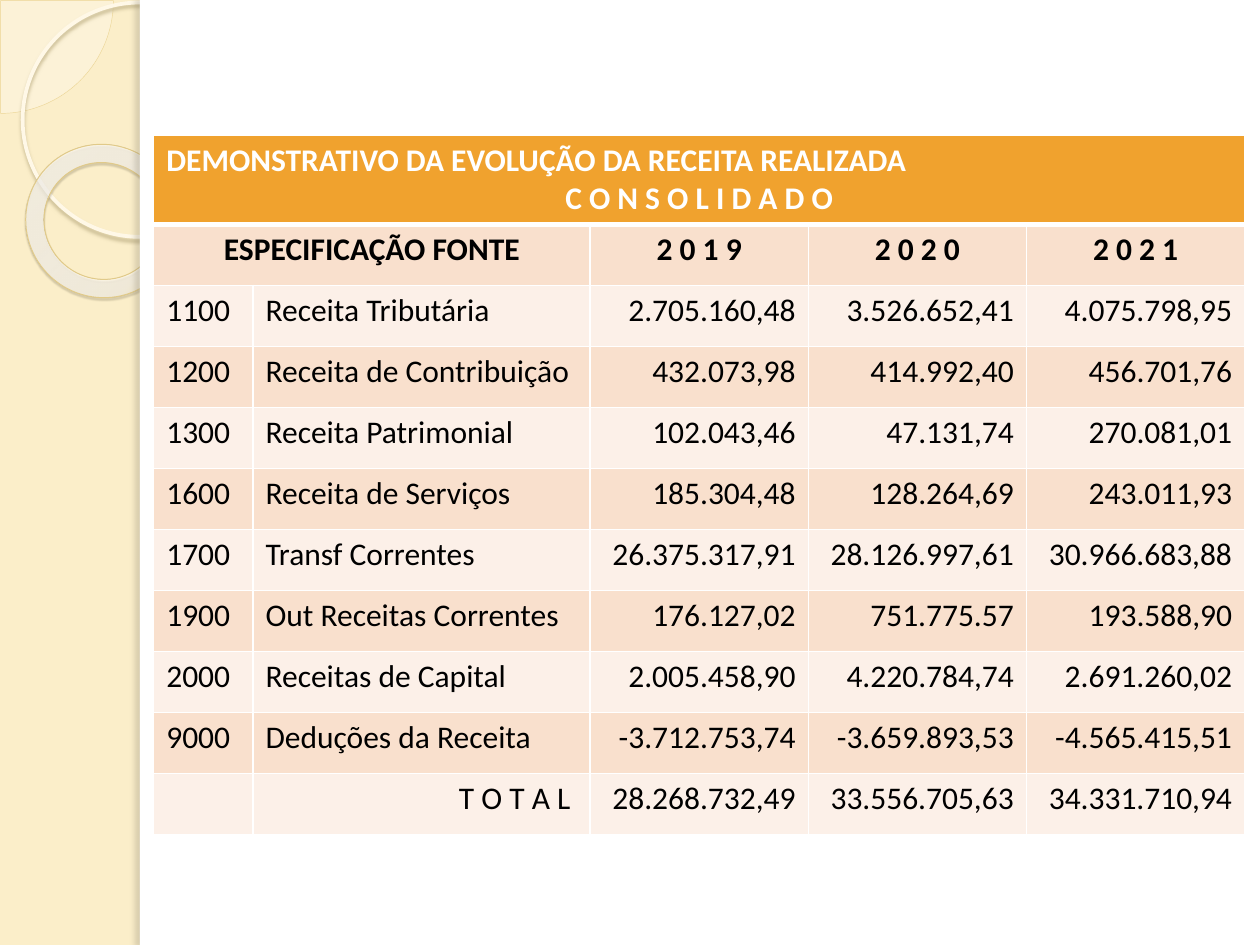
from dataclasses import dataclass

from pptx import Presentation
from pptx.dml.color import RGBColor
from pptx.enum.shapes import MSO_SHAPE
from pptx.enum.text import PP_ALIGN
from pptx.oxml import parse_xml
from pptx.oxml.ns import nsdecls, qn
from pptx.util import Inches, Pt

SLIDE_WIDTH, SLIDE_HEIGHT = Inches(10), Inches(7.5)


@dataclass(frozen=True)
class Theme:
    cream: str = "FBEEC9"
    white: str = "FFFFFF"
    black: str = "000000"
    heading: str = "F0A22E"
    bands: tuple = ("FCF0E8", "F9E0CD")
    corner: str = "FFFCF6"
    corner_edge: str = "ECD697"
    circle_edge: str = "FFF8E7"
    circle_shadow: str = "C3B58B"
    ring_edge: str = "E1CA89"
    ring_shadow: str = "655C41"
    ring_stops: tuple = ((0, "FFFDF8", 70), (70, "FFFEFC", 55), (100, "FFE290", 60))
    panel_shadow: str = "7E7763"
    font: str = "Calibri"
    size: int = 18
    rule: int = 1
    heading_rule: int = 3


THEME = Theme()

COLUMN_SHARES = (9.1, 30.9, 20, 20, 20)
HEADING = "DEMONSTRATIVO DA EVOLUÇÃO DA RECEITA REALIZADA\nC O N S O L I D A D O"
REVENUE = (
    (HEADING, "", "", "", ""),
    ("ESPECIFICAÇÃO FONTE", "", "2 0 1 9", "2 0 2 0", "2 0 2 1"),
    ("1100", "Receita Tributária", "2.705.160,48", "3.526.652,41", "4.075.798,95"),
    ("1200", "Receita de Contribuição", "432.073,98", "414.992,40", "456.701,76"),
    ("1300", "Receita Patrimonial", "102.043,46", "47.131,74", "270.081,01"),
    ("1600", "Receita de Serviços", "185.304,48", "128.264,69", "243.011,93"),
    ("1700", "Transf Correntes", "26.375.317,91", "28.126.997,61", "30.966.683,88"),
    ("1900", "Out Receitas Correntes", "176.127,02", "751.775.57", "193.588,90"),
    ("2000", "Receitas de Capital", "2.005.458,90", "4.220.784,74", "2.691.260,02"),
    ("9000", "Deduções da Receita", "-3.712.753,74", "-3.659.893,53", "-4.565.415,51"),
    ("", "T O T A L ", "28.268.732,49", "33.556.705,63", "34.331.710,94"),
)


def box(left, top, width, height):
    return (
        int(SLIDE_WIDTH * left / 100),
        int(SLIDE_HEIGHT * top / 100),
        int(SLIDE_WIDTH * width / 100),
        int(SLIDE_HEIGHT * height / 100),
    )


def add_ornament(slide, preset, place, fill=None, edge=None, edge_width=0):
    ornament = slide.shapes.add_shape(preset, *box(*place))
    ornament.shadow.inherit = False
    if fill:
        ornament.fill.solid()
        ornament.fill.fore_color.rgb = RGBColor.from_string(fill)
    else:
        ornament.fill.background()
    if edge:
        ornament.line.color.rgb = RGBColor.from_string(edge)
        ornament.line.width = Pt(edge_width)
    else:
        ornament.line.fill.background()
    return ornament


def color_xml(color, opacity):
    return f'<a:srgbClr val="{color}"><a:alpha val="{opacity * 1000}"/></a:srgbClr>'


def set_opacity(ornament, color, opacity):
    solid = ornament.element.spPr.find(qn("a:solidFill"))
    fill = parse_xml(f'<a:solidFill {nsdecls("a")}>{color_xml(color, opacity)}</a:solidFill>')
    ornament.element.spPr.replace(solid, fill)


def set_radial_fill(ornament, stops):
    stop_xml = "".join(
        f'<a:gs pos="{position * 1000}">{color_xml(color, opacity)}</a:gs>'
        for position, color, opacity in stops
    )
    gradient = parse_xml(
        f'<a:gradFill {nsdecls("a")} rotWithShape="1"><a:gsLst>{stop_xml}</a:gsLst>'
        '<a:path path="circle"><a:fillToRect l="-408000" t="-50000" r="508000" b="150000"/>'
        "</a:path></a:gradFill>"
    )
    empty = ornament.element.spPr.find(qn("a:noFill"))
    ornament.element.spPr.replace(empty, gradient)


def cast_shadow(ornament, color, opacity, blur, distance, angle):
    effects = ornament.element.spPr.find(qn("a:effectLst"))
    effects.append(parse_xml(
        f'<a:outerShdw {nsdecls("a")} blurRad="{Pt(blur)}" dist="{Pt(distance)}" '
        f'dir="{angle * 60000}" algn="tl" rotWithShape="0">{color_xml(color, opacity)}</a:outerShdw>'
    ))


def add_side_decoration(slide):
    corner = add_ornament(slide, MSO_SHAPE.PIE, (-8.9, -11.87, 17.9, 23.87),
                          THEME.corner, THEME.corner_edge, 0.25)
    corner.adjustments[0] = 0
    corner.adjustments[1] = 54.02
    set_opacity(corner, THEME.corner, 33)

    circle = add_ornament(slide, MSO_SHAPE.OVAL, (1.8, 0.27, 18.6, 24.8),
                          edge=THEME.circle_edge, edge_width=2.15)
    cast_shadow(circle, THEME.circle_shadow, 85, 2, 2, 90)

    ring = add_ornament(slide, MSO_SHAPE.DONUT, (2, 15.33, 12.3, 16.13),
                        edge=THEME.ring_edge, edge_width=0.58)
    ring.adjustments[0] = 0.12
    ring.rotation = 38.6
    set_radial_fill(ring, THEME.ring_stops)
    cast_shadow(ring, THEME.ring_shadow, 35, 1, 1.2, 75)

    add_ornament(slide, MSO_SHAPE.RECTANGLE, (11.1, 0, 88.9, 100), THEME.white)
    panel_edge = add_ornament(slide, MSO_SHAPE.RECTANGLE, (11.1, 0, 0.8, 100), THEME.white)
    cast_shadow(panel_edge, THEME.panel_shadow, 25, 3, 3, 180)


def set_borders(cell, top, bottom):
    properties = cell._tc.get_or_add_tcPr()
    for side, width in (("L", THEME.rule), ("R", THEME.rule), ("T", top), ("B", bottom)):
        properties.append(parse_xml(
            f'<a:ln{side} {nsdecls("a")} w="{Pt(width)}">'
            f'<a:solidFill><a:srgbClr val="{THEME.white}"/></a:solidFill></a:ln{side}>'
        ))


def alignment_for(row, column, line):
    if row == 0:
        return PP_ALIGN.CENTER if line else PP_ALIGN.LEFT
    if row == 1:
        return PP_ALIGN.CENTER
    is_total_label = row == len(REVENUE) - 1 and column == 1
    return PP_ALIGN.RIGHT if column > 1 or is_total_label else PP_ALIGN.LEFT


def fill_cell(cell, row, column, wording):
    set_borders(
        cell,
        THEME.heading_rule if row == 1 else THEME.rule,
        THEME.heading_rule if row == 0 else THEME.rule,
    )
    cell.fill.solid()
    cell.fill.fore_color.rgb = RGBColor.from_string(THEME.bands[row % 2] if row else THEME.heading)
    cell.text_frame.text = wording
    for line, paragraph in enumerate(cell.text_frame.paragraphs):
        paragraph.alignment = alignment_for(row, column, line)
        for run in paragraph.runs:
            run.font.name = THEME.font
            run.font.size = Pt(THEME.size)
            run.font.bold = row < 2
            run.font.color.rgb = RGBColor.from_string(THEME.black if row else THEME.white)


def add_revenue_table(slide):
    place = box(12.2, 14.27, 86.6, 71.07)
    table = slide.shapes.add_table(len(REVENUE), len(COLUMN_SHARES), *place).table
    for column, share in zip(table.columns, COLUMN_SHARES):
        column.width = int(place[2] * share / 100)
    for row, entries in enumerate(REVENUE):
        for column, wording in enumerate(entries):
            fill_cell(table.cell(row, column), row, column, wording)
    table.cell(0, 0).merge(table.cell(0, len(COLUMN_SHARES) - 1))
    table.cell(1, 0).merge(table.cell(1, 1))


def main():
    presentation = Presentation()
    presentation.slide_width, presentation.slide_height = SLIDE_WIDTH, SLIDE_HEIGHT
    slide = presentation.slides.add_slide(presentation.slide_layouts[6])
    slide.background.fill.solid()
    slide.background.fill.fore_color.rgb = RGBColor.from_string(THEME.cream)
    add_side_decoration(slide)
    add_revenue_table(slide)
    presentation.save("out.pptx")


if __name__ == "__main__":
    main()
